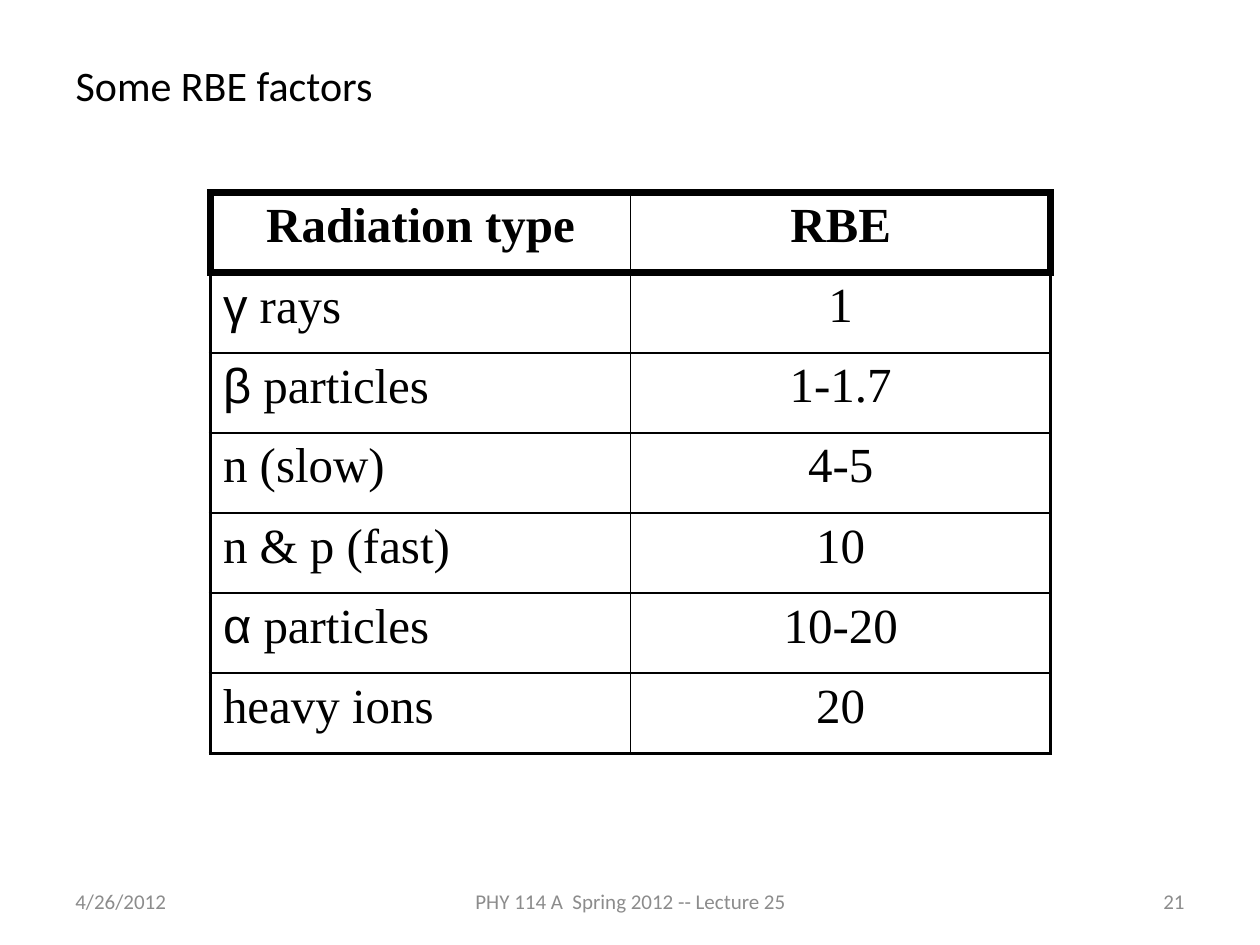
from lxml import etree
from pptx import Presentation
from pptx.dml.color import RGBColor
from pptx.enum import text
from pptx.oxml.ns import qn
from pptx.util import Inches, Pt

COLORS = {"ink": "000000", "footer": "8C8C8C"}
TITLE = "Some RBE factors"
ROWS = [
    ("Radiation type", "RBE"),
    ("γ rays", "1"),
    ("β particles", "1-1.7"),
    ("n (slow)", "4-5"),
    ("n & p (fast)", "10"),
    ("α particles", "10-20"),
    ("heavy ions", "20"),
]
GREEK = "αβγ"
LEFT, CENTER, RIGHT = text.PP_ALIGN.LEFT, text.PP_ALIGN.CENTER, text.PP_ALIGN.RIGHT
FOOTERS = [  # text, left, width, alignment
    ("4/26/2012", 0.5, 2.33, LEFT),
    ("PHY 114 A  Spring 2012 -- Lecture 25", 3.42, 3.17, CENTER),
    ("21", 7.17, 2.33, RIGHT),
]
HEADER_LINE, OUTER_LINE, INNER_LINE = 4.5, 2.25, 1


def style(r, font, size, color, bold=False):
    r.font.name, r.font.size, r.font.bold = font, Pt(size), bold
    r.font.color.rgb = RGBColor.from_string(COLORS[color])


def place(sp, left, top, width, height):
    sp.left, sp.top = Inches(left), Inches(top)
    sp.width, sp.height = Inches(width), Inches(height)


def set_borders(cell, widths):
    """Draw the left, right, top and bottom lines, with widths in points."""
    tcPr = cell._tc.get_or_add_tcPr()
    for i, (side, width) in enumerate(zip("LRTB", widths)):
        ln = etree.Element(qn(f"a:ln{side}"), w=str(Pt(width)))
        fill = etree.SubElement(ln, qn("a:solidFill"))
        etree.SubElement(fill, qn("a:srgbClr"), val=COLORS["ink"])
        tcPr.insert(i, ln)


def border_widths(row, col):
    outer = OUTER_LINE if row else HEADER_LINE
    left, right = (outer, INNER_LINE) if col == 0 else (INNER_LINE, outer)
    top = HEADER_LINE if row <= 1 else INNER_LINE
    if row == 0:
        bottom = HEADER_LINE
    else:
        bottom = OUTER_LINE if row == len(ROWS) - 1 else INNER_LINE
    return left, right, top, bottom


def fill_cell(cell, row, col):
    cell.fill.background()
    set_borders(cell, border_widths(row, col))
    p = cell.text_frame.paragraphs[0]
    p.alignment = CENTER if row == 0 or col else LEFT
    label = ROWS[row][col]
    split = 1 if label[0] in GREEK else 0
    for part, font in ((label[:split], "Arial"), (label[split:], "Times New Roman")):
        if part:
            r = p.add_run()
            r.text = part
            style(r, font, 28, "ink", bold=row == 0)


def add_title(s):
    sp = s.shapes.title
    place(sp, 0.5, 0.42, 8, 0.5)
    tf = sp.text_frame
    tf.text = TITLE
    tf.auto_size = text.MSO_AUTO_SIZE.SHAPE_TO_FIT_TEXT
    tf.vertical_anchor = text.MSO_ANCHOR.TOP
    tf.paragraphs[0].alignment = LEFT
    style(tf.paragraphs[0].runs[0], "Calibri", 24, "ink")


def add_rbe_table(s):
    frame = s.shapes.add_table(len(ROWS), 2, Inches(1.67), Inches(1.53),
                               Inches(6.67), Inches(4.45))
    table = frame.table
    table.first_row = table.horz_banding = False
    for row in range(len(ROWS)):
        for col in range(2):
            fill_cell(table.cell(row, col), row, col)


def add_footers(s):
    for label, left, width, align in FOOTERS:
        sp = s.shapes.add_textbox(Inches(left), Inches(6.95), Inches(width), Inches(0.4))
        tf = sp.text_frame
        tf.word_wrap = True
        tf.vertical_anchor = text.MSO_ANCHOR.MIDDLE
        tf.text = label
        tf.paragraphs[0].alignment = align
        style(tf.paragraphs[0].runs[0], "Calibri", 12, "footer")


def main():
    prs = Presentation()
    prs.slide_width, prs.slide_height = Inches(10), Inches(7.5)
    s = prs.slides.add_slide(prs.slide_layouts.get_by_name("Title Only"))
    add_footers(s)
    add_title(s)
    add_rbe_table(s)
    prs.save("out.pptx")


if __name__ == "__main__":
    main()
